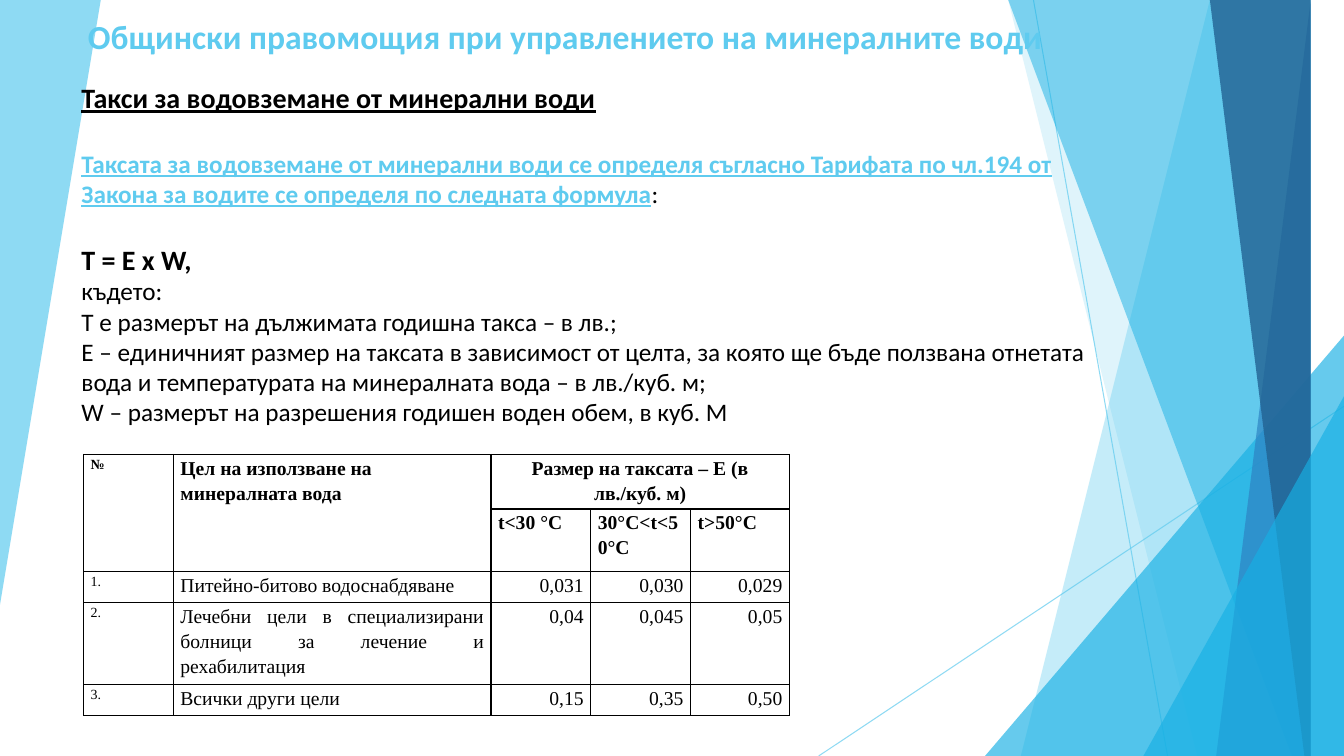
import pptx
import pptx.dml.color
import pptx.enum.shapes
import pptx.enum.text
import pptx.oxml
import pptx.oxml.ns
import pptx.util
from pptx.dml.color import RGBColor
from pptx.util import Inches

SKY = RGBColor(0x5F, 0xCB, 0xEF)
CYAN = RGBColor(0x17, 0xB0, 0xE4)
BLUE = RGBColor(0x2E, 0x83, 0xC3)
NAVY = RGBColor(0x22, 0x62, 0x92)
BLACK = RGBColor(0, 0, 0)
ALIGN = pptx.enum.text.PP_ALIGN
WIDTH, HEIGHT = 13.33, 7.5


def set_opacity(shape, percent):
    for colour in shape.element.spPr.iter(pptx.oxml.ns.qn("a:srgbClr")):
        alpha = colour.makeelement(pptx.oxml.ns.qn("a:alpha"), {"val": str(percent * 1000)})
        colour.append(alpha)


def format_span(span, size, colour=BLACK, bold=False, underline=False, name="Calibri"):
    span.font.name = name
    span.font.size = pptx.util.Pt(size)
    span.font.bold = bold
    span.font.underline = underline
    span.font.color.rgb = colour


deck = pptx.Presentation()
deck.slide_width, deck.slide_height = Inches(WIDTH), Inches(HEIGHT)
page = deck.slides.add_slide(deck.slide_layouts[6])

# Background lines
for x1, y1, x2, y2 in [(10.25, 0, 11.58, HEIGHT), (WIDTH, 4.03, 8.12, HEIGHT)]:
    ray = page.shapes.add_connector(
        pptx.enum.shapes.MSO_CONNECTOR.STRAIGHT, Inches(x1), Inches(y1), Inches(x2), Inches(y2))
    ray.line.color.rgb = SKY
    ray.line.width = pptx.util.Pt(0.75)
    set_opacity(ray, 70)
    ray.element.spPr.append(ray.element.makeelement(pptx.oxml.ns.qn("a:effectLst"), {}))

# Background facets, back to front: a right triangle is given by its left and top,
# a band on the right by its top-left and bottom-left corners
facets = [
    ("outline", [(0, 0), (0.94, 0), (0, 6.22)], SKY, 70),
    ("band", (12.28, 10.04), SKY, 36),
    ("band", (10.5, 11.83), SKY, 20),
    ("triangle", (9.77, 3.33), CYAN, 66),
    ("band", (10.21, 12.91), CYAN, 50),
    ("band", (13.03, 11.92), BLUE, 70),
    ("band", (11.96, 13.18), NAVY, 80),
    ("triangle", (11.34, 3.93), CYAN, 66),
]
for kind, points, colour, opacity in facets:
    if kind == "triangle":
        left, top = points
        facet = page.shapes.add_shape(
            pptx.enum.shapes.MSO_SHAPE.ISOSCELES_TRIANGLE,
            Inches(left), Inches(top), Inches(WIDTH - left), Inches(HEIGHT - top))
        facet.adjustments[0] = 1
    else:
        if kind == "band":
            points = [(points[0], 0), (WIDTH, 0), (WIDTH, HEIGHT), (points[1], HEIGHT)]
        outline = page.shapes.build_freeform(*points[0], scale=Inches(1))
        outline.add_line_segments(points[1:], close=True)
        facet = outline.convert_to_shape()
    facet.shadow.inherit = False
    facet.fill.solid()
    facet.fill.fore_color.rgb = colour
    facet.line.fill.background()
    set_opacity(facet, opacity)

# Title, subtitle and body
title = page.shapes.add_textbox(Inches(0.68), Inches(0.12), Inches(9.85), Inches(0.49))
subtitle = page.shapes.add_textbox(Inches(0.71), Inches(0.75), Inches(11.17), Inches(0.44))
body = page.shapes.add_textbox(Inches(0.71), Inches(1.42), Inches(10.31), Inches(3.5))
for box in (title, subtitle, body):
    box.text_frame.word_wrap = True

title.text_frame.vertical_anchor = pptx.enum.text.MSO_ANCHOR.BOTTOM
title.text_frame.text = "Общински правомощия при управлението на минералните води"
title.text_frame.paragraphs[0].alignment = ALIGN.CENTER
format_span(title.text_frame.paragraphs[0].runs[0], 24, SKY, bold=True)

subtitle.text_frame.text = "Такси за водовземане от минерални води"
format_span(subtitle.text_frame.paragraphs[0].runs[0], 20, bold=True, underline=True)

body.text_frame.text = "\n".join([
    "Таксата за водовземане от минерални води се определя съгласно Тарифата по чл.194 от "
    "Закона за водите се определя по следната формула",
    "Т = Е х W,",
    "където:",
    "Т е размерът на дължимата годишна такса – в лв.;",
    "Е – единичният размер на таксата в зависимост от целта, за която ще бъде ползвана "
    "отнетата вода и температурата на минералната вода – в лв./куб. м;",
    "W – размерът на разрешения годишен воден обем, в куб. М",
])
intro, formula, *legend = body.text_frame.paragraphs
format_span(intro.runs[0], 18, SKY, bold=True, underline=True)
colon = intro.add_run()
colon.text = ":"
format_span(colon, 18)
intro.space_after = pptx.util.Pt(24)
format_span(formula.runs[0], 20, bold=True)
for para in legend:
    format_span(para.runs[0], 18)

# Fee table
fees = [
    ["№", "Цел на използване на минералната вода", "Размер на таксата – Е (в лв./куб. м)", "", ""],
    ["", "", "t<30 °С", "30°С<t<50°С", "t>50°С"],
    ["1.", "Питейно-битово водоснабдяване", "0,031", "0,030", "0,029"],
    ["2.", "Лечебни цели в специализирани болници за лечение и\vрехабилитация",
     "0,04", "0,045", "0,05"],
    ["3.", "Всички други цели", "0,15", "0,35", "0,50"],
]
column_widths = [0.89, 3.15, 0.99, 0.99, 0.98]
row_heights = [0.54, 0.62, 0.31, 0.81, 0.31]
table = page.shapes.add_table(
    5, 5, Inches(0.83), Inches(4.51),
    Inches(sum(column_widths)), Inches(sum(row_heights))).table
table.first_row = table.horz_banding = False
for column, width in zip(table.columns, column_widths):
    column.width = Inches(width)
for row, height in zip(table.rows, row_heights):
    row.height = Inches(height)
table.cell(0, 0).merge(table.cell(1, 0))
table.cell(0, 1).merge(table.cell(1, 1))
table.cell(0, 2).merge(table.cell(0, 4))

for r, row in enumerate(fees):
    for c, text in enumerate(row):
        cell = table.cell(r, c)
        cell.margin_left = cell.margin_right = Inches(0.07)
        cell.margin_top = cell.margin_bottom = 0
        for side in ("lnL", "lnR", "lnT", "lnB"):
            cell._tc.get_or_add_tcPr().append(pptx.oxml.parse_xml(
                f'<a:{side} {pptx.oxml.ns.nsdecls("a")} w="12700"><a:solidFill>'
                f'<a:srgbClr val="{BLACK}"/></a:solidFill></a:{side}>'))
        cell.fill.background()
        if not text:
            continue
        cell.text_frame.text = text
        para = cell.text_frame.paragraphs[0]
        para.line_spacing = 1.15
        para.space_after = pptx.util.Pt(6)
        if r >= 2 and c >= 2:
            para.alignment = ALIGN.RIGHT
        elif (r, c) == (0, 2):
            para.alignment = ALIGN.CENTER
        elif (r, c) == (3, 1):
            para.alignment = ALIGN.JUSTIFY
        for span in para.runs:
            format_span(span, 10 if c == 0 else 14, bold=r < 2, name="Times New Roman")

deck.save("out.pptx")
